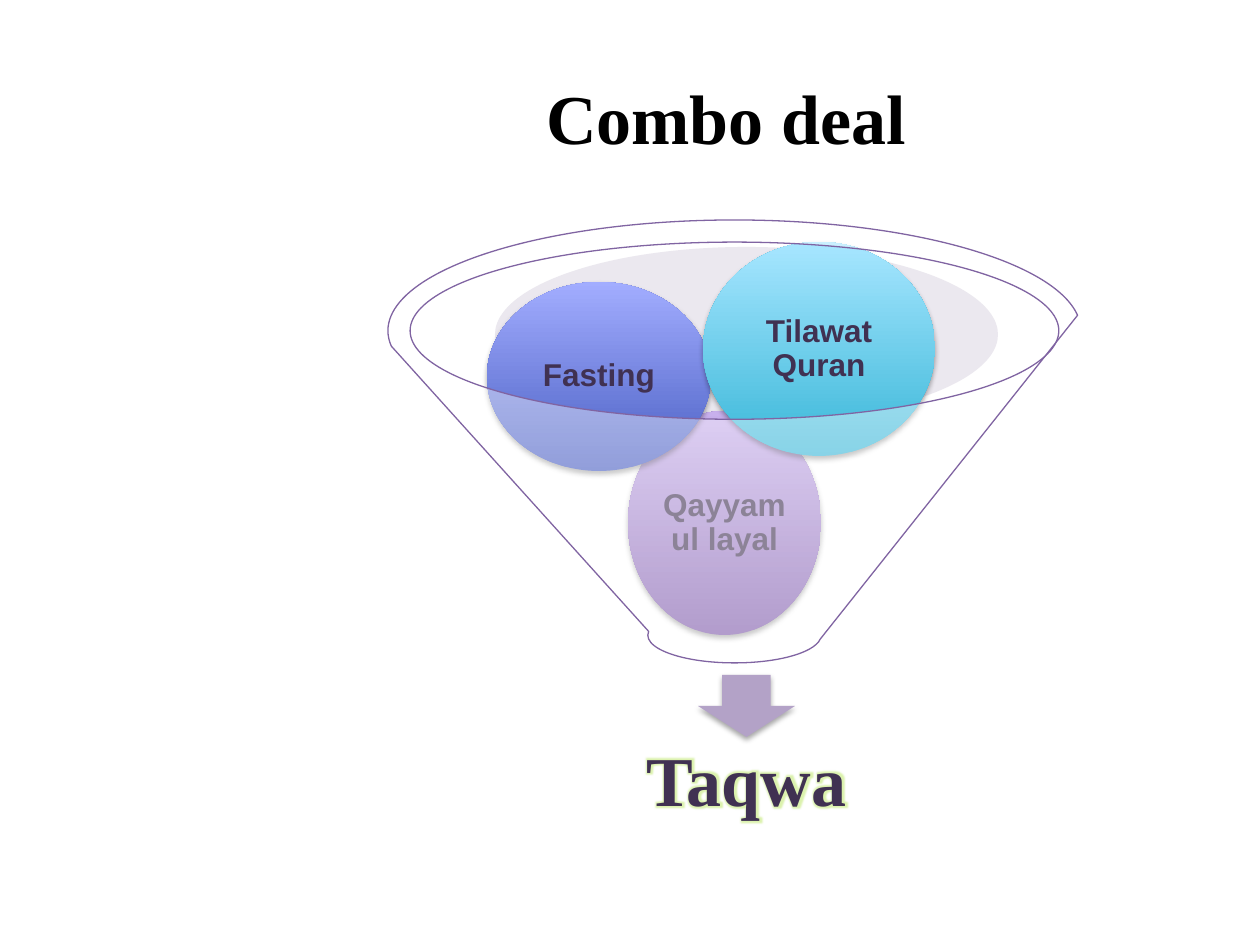
from lxml import etree
from pptx import Presentation
from pptx.dml.color import RGBColor
from pptx.enum.shapes import MSO_SHAPE
from pptx.enum.text import MSO_ANCHOR, PP_ALIGN
from pptx.oxml.ns import qn
from pptx.util import Emu, Pt

OVAL, ARROW, FUNNEL = MSO_SHAPE.OVAL, MSO_SHAPE.DOWN_ARROW, MSO_SHAPE.FUNNEL
MIDDLE, CENTER = MSO_ANCHOR.MIDDLE, PP_ALIGN.CENTER

EMU_PER_PX = 914400 / 126
BLACK = RGBColor(0x00, 0x00, 0x00)
WHITE = RGBColor(0xFF, 0xFF, 0xFF)
DARK_PURPLE = RGBColor(0x40, 0x31, 0x52)
OUTLINE_PURPLE = RGBColor(0x80, 0x64, 0xA2)
ARROW_PURPLE = RGBColor(0xB3, 0xA2, 0xC7)
MOUTH_PURPLE = RGBColor(0xCD, 0xC6, 0xD7)
GLOW_GREEN = RGBColor(0xA7, 0xDF, 0x34)

INGREDIENTS = [
    ("Qayyam ul layal", (628, 411, 193, 224),
     RGBColor(0x7F, 0x5B, 0xAB), RGBColor(0xC8, 0xB0, 0xED)),
    ("Fasting", (487, 282, 224, 189),
     RGBColor(0x49, 0x5E, 0xC2), RGBColor(0xA2, 0xAD, 0xFF)),
    ("Tilawat Quran", (703, 242, 232, 214),
     RGBColor(0x39, 0xB7, 0xD8), RGBColor(0xA7, 0xE6, 0xFF)),
]


def px(length):
    """Turn pixels into EMU."""
    return Emu(round(length * EMU_PER_PX))


def add_effect(properties, tag, color, opacity, **attributes):
    """Append one shadow or glow effect to shape or run properties."""
    effects = properties.find(qn("a:effectLst"))
    if effects is None:
        effects = etree.SubElement(properties, qn("a:effectLst"))
    effect = etree.SubElement(effects, qn(tag), attributes)
    tint = etree.SubElement(effect, qn("a:srgbClr"), val=str(color))
    etree.SubElement(tint, qn("a:alpha"), val=str(opacity * 1000))


def add_figure(slide, preset, box, fill=None, opacity=100, line=None, shadow=False):
    """Add a preset shape with its fill, outline and optional soft shadow."""
    figure = slide.shapes.add_shape(preset, *map(px, box))
    figure.shadow.inherit = False
    if fill is not None:
        figure.fill.solid()
        figure.fill.fore_color.rgb = fill
    if opacity < 100:
        tint = figure._element.spPr.find(qn("a:solidFill"))[0]
        etree.SubElement(tint, qn("a:alpha"), val=str(opacity * 1000))
    if line is None:
        figure.line.fill.background()
    else:
        figure.line.color.rgb = line
        figure.line.width = Pt(0.75)
    if shadow:
        add_effect(figure._element.spPr, "a:outerShdw", BLACK, 35,
                   blurRad="40000", dist="23000", dir="5400000", rotWithShape="0")
    return figure


def write_text(holder, text, font_name, size, color, inset, spacing=1.0):
    """Write one centred bold paragraph and return its run."""
    frame = holder.text_frame
    frame.word_wrap = True
    frame.vertical_anchor = MIDDLE
    frame.margin_left = frame.margin_right = px(inset)
    frame.margin_top = frame.margin_bottom = px(inset)
    paragraph = frame.paragraphs[0]
    paragraph.alignment = CENTER
    paragraph.line_spacing = spacing
    run = paragraph.add_run()
    run.text = text
    font = paragraph.font
    font.name, font.size, font.bold = font_name, Pt(size), True
    font.color.rgb = color
    return run


def add_heading(slide, text, box, color, inset, spacing=1.0):
    """Add a large serif text box and return its run."""
    heading = slide.shapes.add_textbox(*map(px, box))
    return write_text(heading, text, "Times New Roman", 40, color, inset, spacing)


def add_ingredient(slide, label, box, bottom_color, top_color):
    """Add a labelled ball with a vertical gradient."""
    ball = add_figure(slide, OVAL, box, shadow=True)
    ball.fill.gradient()
    ball.fill.gradient_angle = 90
    for stop, color in zip(ball.fill.gradient_stops, (bottom_color, top_color)):
        stop.color.rgb = color
    write_text(ball, label, "Arial", 18, DARK_PURPLE, 4, 0.9)


def main():
    """Build the funnel slide and save it."""
    deck = Presentation()
    deck.slide_width, deck.slide_height = px(1260), px(945)
    slide = deck.slides.add_slide(deck.slide_layouts[6])

    add_heading(slide, "Combo deal", (255, 38, 942, 157), BLACK, 6)
    add_figure(slide, OVAL, (495, 247, 503, 175), MOUTH_PURPLE, opacity=40)
    add_figure(slide, ARROW, (698, 675, 97, 62), ARROW_PURPLE, shadow=True)
    result = add_heading(slide, "Taqwa", (513, 725, 467, 117), DARK_PURPLE, 39, 0.9)
    add_effect(result.font._element, "a:glow", GLOW_GREEN, 40, rad="63500")
    for ingredient in INGREDIENTS:
        add_ingredient(slide, *ingredient)
    add_figure(slide, FUNNEL, (388, 220, 693, 443), WHITE, opacity=40, line=OUTLINE_PURPLE)

    deck.save("out.pptx")


if __name__ == "__main__":
    main()
